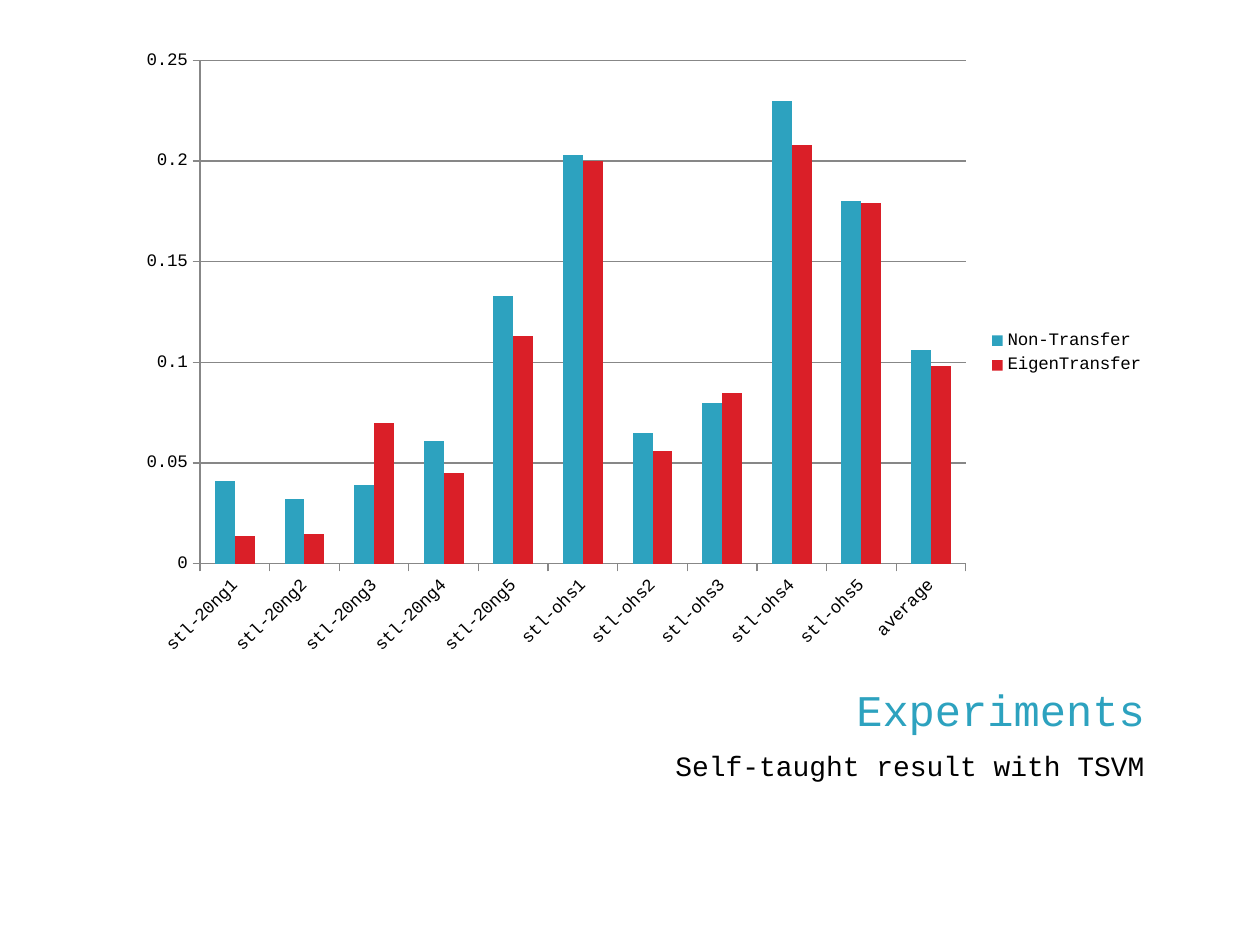
from typing import NamedTuple

from pptx import Presentation
from pptx.chart.data import CategoryChartData
from pptx.dml.color import RGBColor
from pptx.enum.chart import XL_CHART_TYPE as ChartType
from pptx.enum.chart import XL_LEGEND_POSITION as LegendPos
from pptx.enum.chart import XL_TICK_MARK as TickMark
from pptx.enum.text import MSO_ANCHOR as Anchor
from pptx.enum.text import PP_ALIGN as Align
from pptx.util import Emu, Pt

FONT = "Courier New"
TEAL, RED, BLACK, GRAY = "2DA2BF", "DA1F28", "000000", "878787"


class Box(NamedTuple):
    left: int
    top: int
    width: int
    height: int


class Label(NamedTuple):
    text: str
    box: Box
    size: int
    color: str
    anchor: Anchor
    inset_top: int
    inset_bottom: int


class Series(NamedTuple):
    name: str
    color: str
    values: tuple[float, ...]


CATEGORIES = [f"stl-{group}{i}" for group in ("20ng", "ohs") for i in range(1, 6)]
CATEGORIES.append("average")
SERIES = [
    Series("Non-Transfer", TEAL,
           (0.041, 0.032, 0.039, 0.061, 0.133, 0.203, 0.065, 0.08, 0.23, 0.18, 0.106)),
    Series("EigenTransfer", RED,
           (0.014, 0.015, 0.07, 0.045, 0.113, 0.2, 0.056, 0.085, 0.208, 0.179, 0.098)),
]
LABELS = [
    Label("Experiments", Box(126, 672, 1031, 63), 25, TEAL, Anchor.BOTTOM, 0, 0),
    Label("Self-taught result with TSVM", Box(609, 738, 548, 126), 16, BLACK,
          Anchor.TOP, 11, 6),
]


def px(n: int) -> Emu:
    return Emu(round(n * 914400 / 126))


def rgb(color: str) -> RGBColor:
    return RGBColor.from_string(color)


def add_label(slide, label: Label) -> None:
    s = slide.shapes.add_textbox(*map(px, label.box))
    tf = s.text_frame
    tf.word_wrap = True
    tf.vertical_anchor = label.anchor
    tf.margin_top, tf.margin_bottom = px(label.inset_top), px(label.inset_bottom)
    p = tf.paragraphs[0]
    p.alignment = Align.RIGHT
    r = p.add_run()
    r.text = label.text
    r.font.name, r.font.size = FONT, Pt(label.size)
    r.font.color.rgb = rgb(label.color)


def style_line(line) -> None:
    line.color.rgb = rgb(GRAY)
    line.width = Pt(0.75)


def add_column_chart(slide, box: Box) -> None:
    data = CategoryChartData()
    data.categories = CATEGORIES
    for item in SERIES:
        data.add_series(item.name, item.values)
    chart = slide.shapes.add_chart(ChartType.COLUMN_CLUSTERED, *map(px, box), data).chart
    chart.has_title = False
    chart.font.name, chart.font.size = FONT, Pt(10)
    chart.font.color.rgb = rgb(BLACK)

    # Columns
    plot = chart.plots[0]
    plot.gap_width, plot.overlap, plot.vary_by_categories = 150, 0, False
    for series, item in zip(plot.series, SERIES):
        series.format.fill.solid()
        series.format.fill.fore_color.rgb = rgb(item.color)

    # Axes
    for axis in (chart.category_axis, chart.value_axis):
        axis.major_tick_mark, axis.minor_tick_mark = TickMark.OUTSIDE, TickMark.NONE
        axis.tick_labels.font.size = Pt(10)
        style_line(axis.format.line)
    text = chart.category_axis.tick_labels.font
    text.name = FONT
    chart.category_axis._element.txPr.bodyPr.set("rot", "-2700000")
    scale = chart.value_axis
    scale.minimum_scale, scale.maximum_scale, scale.major_unit = 0, 0.25, 0.05
    scale.has_major_gridlines = True
    style_line(scale.major_gridlines.format.line)

    # Legend
    chart.has_legend = True
    chart.legend.position = LegendPos.RIGHT
    chart.legend.include_in_layout = False


def main() -> None:
    prs = Presentation()
    prs.slide_width, prs.slide_height = px(1260), px(945)
    slide = prs.slides.add_slide(prs.slide_layouts[6])
    for label in LABELS:
        add_label(slide, label)
    add_column_chart(slide, Box(126, 38, 1031, 630))
    prs.save("out.pptx")


if __name__ == "__main__":
    main()
